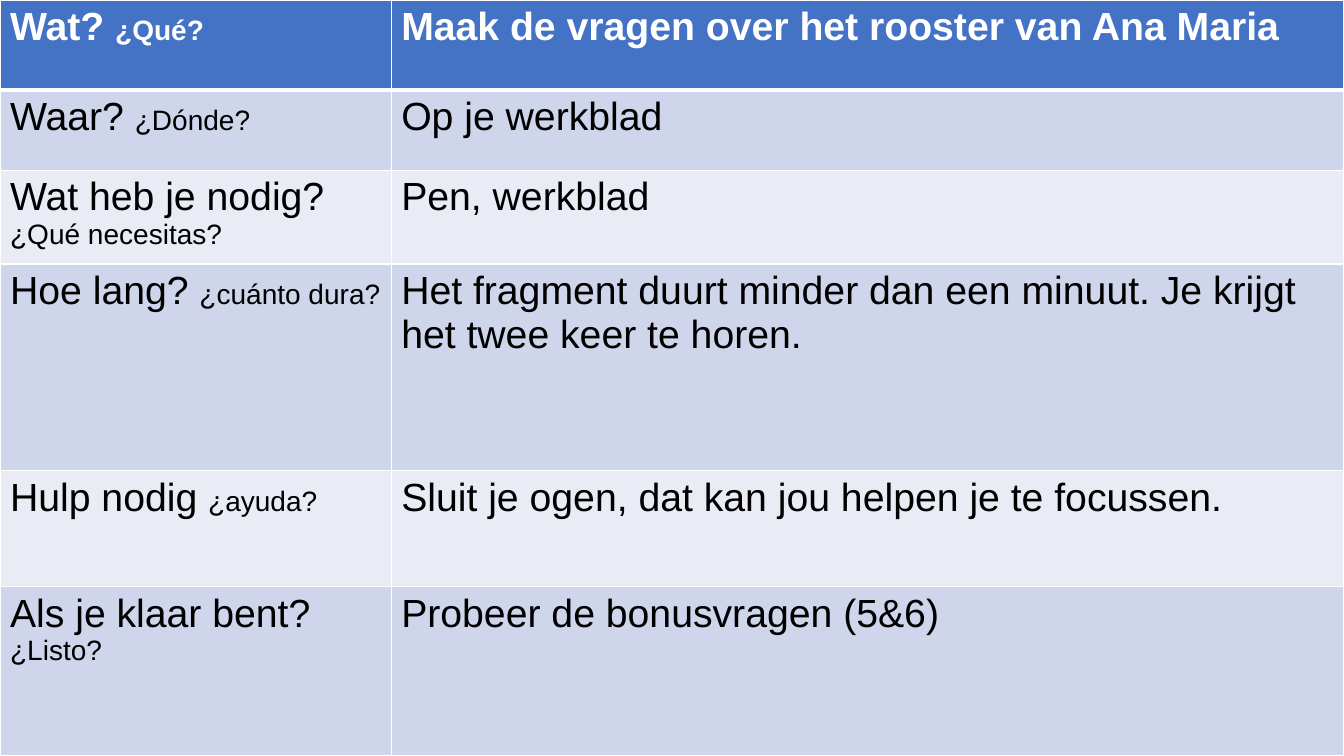
from lxml.etree import SubElement
from pptx import Presentation
from pptx.dml.color import RGBColor
from pptx.oxml.ns import qn
from pptx.util import Inches, Pt

WIDTH, HEIGHT = 13.33, 7.5
COLUMN_WIDTHS = [3.88, 9.45]
ROW_HEIGHTS = [0.89, 0.8, 0.93, 2.05, 1.15, 1.68]
HEADER_FILL, BAND_FILLS = "4472C4", ["CFD5EA", "E9EBF5"]
WHITE, BLACK = "FFFFFF", "000000"

# Dutch question, Spanish translation, answer
TASK_ROWS = [
    ("Wat? ", "¿Qué?", "Maak de vragen over het rooster van Ana Maria"),
    ("Waar? ", "¿Dónde?", "Op je werkblad"),
    ("Wat heb je nodig? ", "¿Qué necesitas?", "Pen, werkblad"),
    ("Hoe lang? ", "¿cuánto dura?",
     "Het fragment duurt minder dan een minuut. Je krijgt het twee keer te horen."),
    ("Hulp nodig ", "¿ayuda?", "Sluit je ogen, dat kan jou helpen je te focussen."),
    ("Als je klaar bent? ", "¿Listo?", "Probeer de bonusvragen (5&6)"),
]


def color(hex_code):
    return RGBColor.from_string(hex_code)


def add_span(para, text, size=28, ink=BLACK, bold=False):
    span = para.add_run()
    span.text = text
    font = span.font
    font.name, font.size, font.bold = "Arial", Pt(size), bold
    font.color.rgb = color(ink)


def set_borders(cell, top=1, bottom=1):
    properties = cell._tc.get_or_add_tcPr()
    for side, width in (("L", 1), ("R", 1), ("T", top), ("B", bottom)):
        line = SubElement(properties, qn(f"a:ln{side}"), w=str(Pt(width)))
        fill = SubElement(line, qn("a:solidFill"))
        SubElement(fill, qn("a:srgbClr"), val=WHITE)


def format_cell(cell, row):
    # The thick rule lies between the header and the first band
    set_borders(cell, top=3 if row == 1 else 1, bottom=3 if row == 0 else 1)
    cell.fill.solid()
    cell.fill.fore_color.rgb = color(BAND_FILLS[(row - 1) % 2] if row else HEADER_FILL)


def add_task_table(page, left, top, width, height):
    box = page.shapes.add_table(len(TASK_ROWS), len(COLUMN_WIDTHS),
                                Inches(left), Inches(top), Inches(width), Inches(height))
    table = box.table
    for column, share in zip(table.columns, COLUMN_WIDTHS):
        column.width = Inches(width * share / sum(COLUMN_WIDTHS))
    for table_row, share in zip(table.rows, ROW_HEIGHTS):
        table_row.height = Inches(height * share / sum(ROW_HEIGHTS))

    for row, (question, translation, answer) in enumerate(TASK_ROWS):
        style = {"ink": BLACK if row else WHITE, "bold": row == 0}
        question_cell, answer_cell = table.cell(row, 0), table.cell(row, 1)
        for cell in (question_cell, answer_cell):
            format_cell(cell, row)
        question_para = question_cell.text_frame.paragraphs[0]
        add_span(question_para, question, **style)
        add_span(question_para, translation, size=20, **style)
        add_span(answer_cell.text_frame.paragraphs[0], answer, **style)


def main():
    deck = Presentation()
    deck.slide_width, deck.slide_height = Inches(WIDTH), Inches(HEIGHT)
    page = deck.slides.add_slide(deck.slide_layouts[6])
    add_task_table(page, 0, 0, WIDTH, HEIGHT)
    deck.save("out.pptx")


if __name__ == "__main__":
    main()
